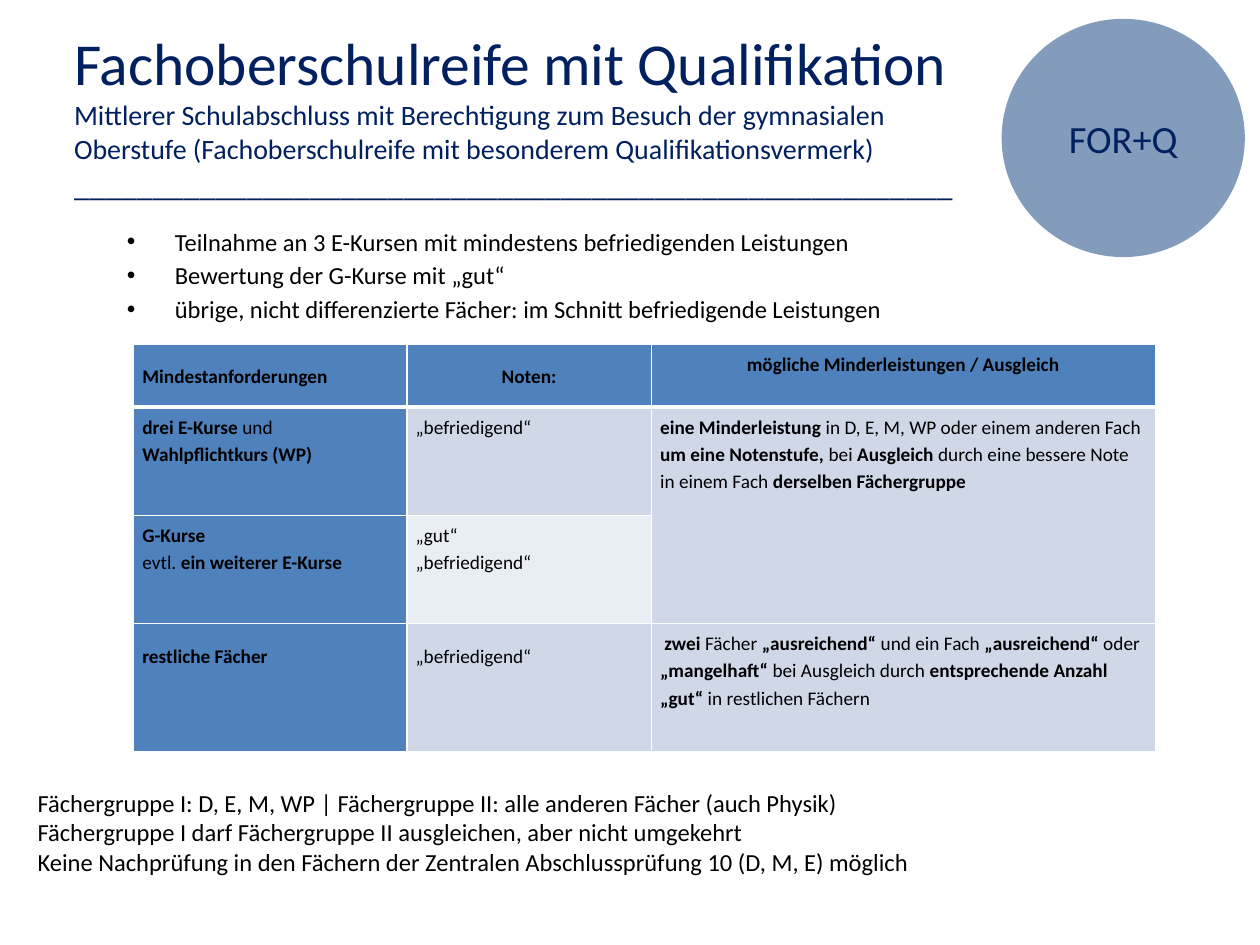
from pptx import Presentation
from pptx.dml.color import RGBColor
from pptx.enum.shapes import MSO_SHAPE
from pptx.enum.text import MSO_ANCHOR, PP_ALIGN
from pptx.oxml.ns import qn
from pptx.util import Inches, Pt
from lxml.etree import SubElement

FONT = "Calibri"
NAVY, BLACK, WHITE = "002060", "000000", "FFFFFF"
BLUE, PALE, LIGHT = "4F81BD", "D0D8E8", "E9EDF4"

HEAD = [
    ("Fachoberschulreife mit Qualifikation", 34),
    ("Mittlerer Schulabschluss mit Berechtigung zum Besuch der gymnasialen", 16),
    ("Oberstufe (Fachoberschulreife mit besonderem Qualifikationsvermerk)", 16),
    ("_" * 56, 18),
]
RULES = [
    "Teilnahme an 3 E-Kursen mit mindestens befriedigenden Leistungen",
    "Bewertung der G-Kurse mit „gut“",
    "übrige, nicht differenzierte Fächer: im Schnitt befriedigende Leistungen",
]
NOTES = [
    "Fächergruppe I: D, E, M, WP | Fächergruppe II: alle anderen Fächer (auch Physik)",
    "Fächergruppe I darf Fächergruppe II ausgleichen, aber nicht umgekehrt",
    "Keine Nachprüfung in den Fächern der Zentralen Abschlussprüfung 10 (D, M, E) möglich",
]
COLS = [2.17, 1.94, 4]
ROWS = [0.5, 0.86, 0.86, 1.02]
# Text between asterisks is bold; each cell is a list of paragraphs.
CELLS = [
    [["*Mindestanforderungen*"], ["*Noten:*"],
     ["*mögliche Minderleistungen / Ausgleich*"]],
    [["*drei E-Kurse *und", "*Wahlpflichtkurs (WP)*"], ["„befriedigend“"],
     ["*eine Minderleistung *in D, E, M, WP oder einem anderen Fach "
      "*um eine Notenstufe, *bei *Ausgleich* durch eine bessere Note "
      "in einem Fach *derselben Fächergruppe*"]],
    [["*G-Kurse*", "evtl. *ein weiterer E-Kurse*"],
     ["„gut“", "„befriedigend“"], []],
    [["*restliche Fächer*"], ["„befriedigend“"],
     ["* zwei *Fächer *„ausreichend“ *und ein Fach *„ausreichend“ *oder "
      "*„mangelhaft“ *bei Ausgleich durch *entsprechende Anzahl „gut“ *"
      "in restlichen Fächern"]],
]
FILLS = [[BLUE] * 3, [BLUE, PALE, PALE], [BLUE, LIGHT, PALE], [BLUE, PALE, PALE]]


def paint(fill, color):
    fill.solid()
    fill.fore_color.rgb = RGBColor.from_string(color)


def add_run(para, text, size, color, bold=False):
    run = para.add_run()
    run.text = text
    font = run.font
    font.name, font.size, font.bold = FONT, Pt(size), bold
    font.color.rgb = RGBColor.from_string(color)


def next_para(frame, index):
    return frame.paragraphs[0] if index == 0 else frame.add_paragraph()


def add_box(slide, left, top, width, height, lines, color, wrap=True):
    """Add a text box from (text, size) lines and return its frame."""
    box = slide.shapes.add_textbox(
        Inches(left), Inches(top), Inches(width), Inches(height))
    frame = box.text_frame
    frame.word_wrap = wrap
    for i, (text, size) in enumerate(lines):
        add_run(next_para(frame, i), text, size, color)
    return frame


def add_bullets(frame):
    for i, para in enumerate(frame.paragraphs):
        props = para._p.get_or_add_pPr()
        props.set("marL", str(Inches(0.38)))
        props.set("indent", str(-Inches(0.38)))
        SubElement(props, qn("a:buFont")).set("typeface", "Arial")
        SubElement(props, qn("a:buChar")).set("char", "•")
        if i:
            para.space_before = Pt(2.4)


def add_badge(slide):
    badge = slide.shapes.add_shape(
        MSO_SHAPE.FLOWCHART_CONNECTOR,
        Inches(7.95), Inches(0.15), Inches(1.93), Inches(1.89))
    badge.shadow.inherit = False
    paint(badge.fill, "376092")
    tone = badge._element.spPr.find(qn("a:solidFill"))[0]
    SubElement(tone, qn("a:alpha")).set("val", "62000")
    badge.line.fill.background()
    frame = badge.text_frame
    frame.vertical_anchor = MSO_ANCHOR.MIDDLE
    para = frame.paragraphs[0]
    para.alignment = PP_ALIGN.CENTER
    add_run(para, "FOR+Q", 22, NAVY)


def add_edges(cell, below):
    props = cell._tc.get_or_add_tcPr()
    for side, width in (("L", 1), ("R", 1), ("T", 1), ("B", below)):
        line = SubElement(props, qn("a:ln" + side), w=str(Pt(width)))
        fill = SubElement(line, qn("a:solidFill"))
        SubElement(fill, qn("a:srgbClr")).set("val", WHITE)


def fill_cell(cell, paras, color, row, col):
    add_edges(cell, 3 if row == 0 else 1)
    paint(cell.fill, color)
    cell.margin_left = cell.margin_right = Inches(0.07)
    low = row == 3 and col < 2
    cell.margin_top = Inches(0.14 if low else 0.04)
    cell.margin_bottom = Inches(0.04)
    middle = row == 0 and col < 2
    cell.vertical_anchor = MSO_ANCHOR.MIDDLE if middle else MSO_ANCHOR.TOP
    for i, text in enumerate(paras):
        para = next_para(cell.text_frame, i)
        para.line_spacing = 1.15
        if row == 0 and col:
            para.alignment = PP_ALIGN.CENTER
        for j, part in enumerate(text.split("*")):
            if part:
                add_run(para, part, 11, BLACK, j % 2 == 1)


def add_grades(slide):
    table = slide.shapes.add_table(
        len(ROWS), len(COLS), Inches(1.06), Inches(2.73),
        Inches(sum(COLS)), Inches(sum(ROWS))).table
    for col, width in zip(table.columns, COLS):
        col.width = Inches(width)
    for row, height in zip(table.rows, ROWS):
        row.height = Inches(height)
    table.cell(1, 2).merge(table.cell(2, 2))
    for r, row in enumerate(CELLS):
        for c, paras in enumerate(row):
            fill_cell(table.cell(r, c), paras, FILLS[r][c], r, c)


def main():
    deck = Presentation()
    deck.slide_width, deck.slide_height = Inches(10), Inches(7.5)
    slide = deck.slides.add_slide(deck.slide_layouts[6])
    add_box(slide, 0.49, 0.16, 7.27, 1.51, HEAD, NAVY, wrap=False)
    add_badge(slide)
    notes = add_box(slide, 0.2, 6.1, 9, 1.25, [(t, 14) for t in NOTES], BLACK)
    notes.vertical_anchor = MSO_ANCHOR.MIDDLE
    notes.margin_bottom = Inches(0.29)
    rules = add_box(slide, 0.91, 1.75, 8.74, 0.95, [(t, 14) for t in RULES], BLACK)
    add_bullets(rules)
    add_grades(slide)
    deck.save("out.pptx")


if __name__ == "__main__":
    main()
